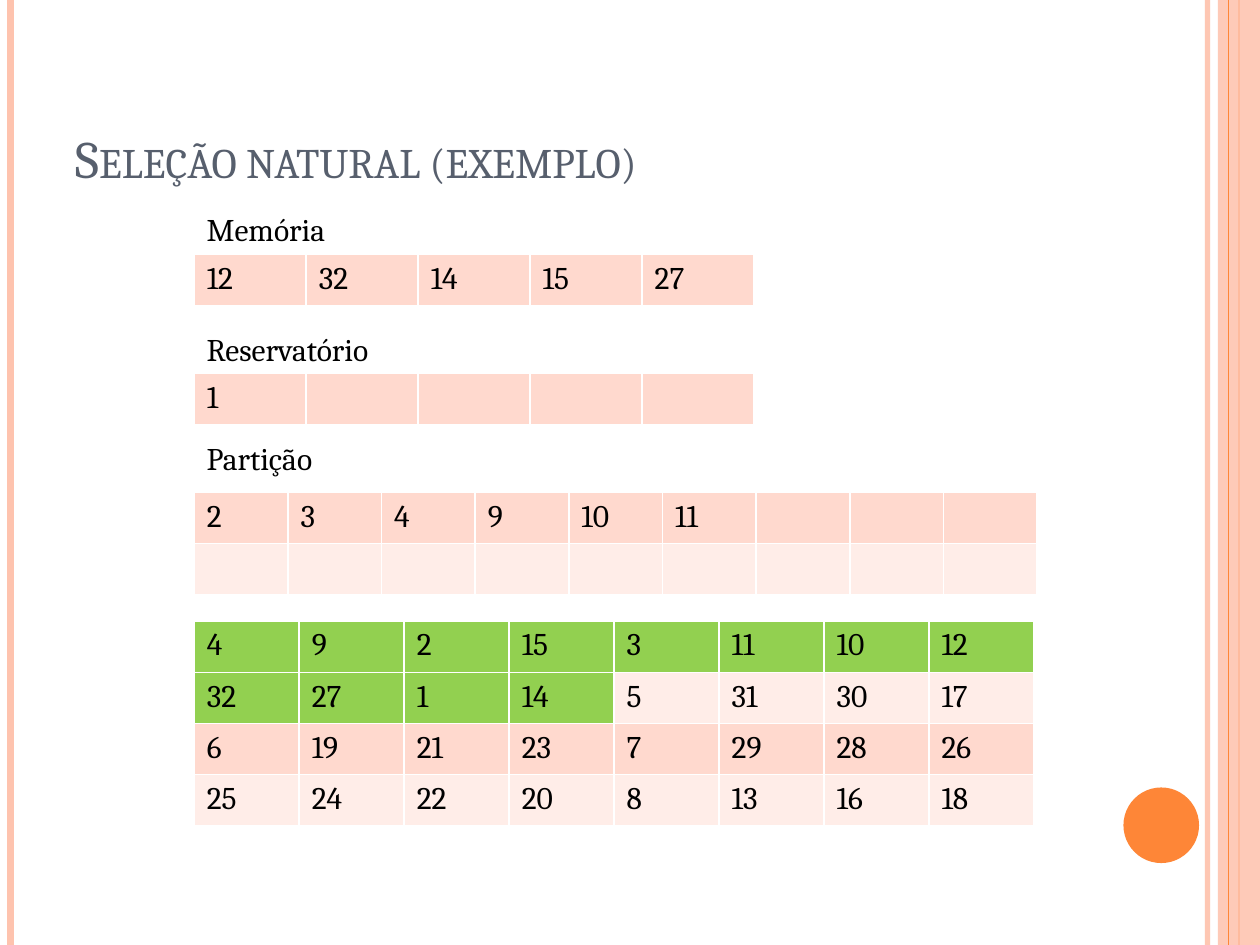
from lxml.etree import SubElement
from pptx import Presentation
from pptx.dml.color import RGBColor
from pptx.enum.shapes import MSO_CONNECTOR as Connector, MSO_SHAPE as Preset
from pptx.enum.text import MSO_ANCHOR as Anchor
from pptx.oxml.ns import qn
from pptx.util import Pt

PAGE_WIDTH, PAGE_HEIGHT = 720, 540
FONT = "Cambria"
PEACH, ORANGE = "FEC3AE", "FE8637"
BANDS = ("FFD9CE", "FFEDE8")
GREEN = "92D050"
ROW_HEIGHT = 29.2
TABLE_LEFT = 111


def color(value):
    return RGBColor.from_string(value)


def set_alpha(fill, percent):
    element = fill._xPr.find(qn("a:solidFill"))[0]
    SubElement(element, qn("a:alpha")).set("val", str(percent * 1000))


def write(frame, text, size=18, ink="000000", small_caps=False):
    span = frame.paragraphs[0].add_run()
    span.text = text
    span.font.name = FONT
    span.font.size = Pt(size)
    span.font.color.rgb = color(ink)
    if small_caps:
        span.font._element.set("cap", "small")


def add_text(page, text, left, top, width, height, anchor=Anchor.TOP, wrap=False, **style):
    box = page.shapes.add_textbox(Pt(left), Pt(top), Pt(width), Pt(height))
    box.text_frame.word_wrap = wrap
    box.text_frame.vertical_anchor = anchor
    write(box.text_frame, text, **style)


def add_vertical(page, x, ink, weight, alpha=100):
    rule = page.shapes.add_connector(Connector.STRAIGHT, Pt(x), Pt(0), Pt(x), Pt(PAGE_HEIGHT))
    rule.line.color.rgb = color(ink)
    rule.line.width = Pt(weight)
    if alpha < 100:
        set_alpha(rule.line.fill, alpha)
    SubElement(rule._element.spPr, qn("a:effectLst"))


def add_solid(page, preset, left, top, width, height, ink):
    solid = page.shapes.add_shape(preset, Pt(left), Pt(top), Pt(width), Pt(height))
    solid.shadow.inherit = False
    solid.fill.solid()
    solid.fill.fore_color.rgb = color(ink)
    solid.line.fill.background()
    return solid


def add_frame(page):
    """Draw the stripes at both page edges and the orange disc."""
    add_vertical(page, 690, PEACH, 3, alpha=93)
    add_vertical(page, 6, PEACH, 4.5)
    add_vertical(page, 708, ORANGE, 1.5)
    band = add_solid(page, Preset.RECTANGLE, 696, 0, PAGE_WIDTH - 696, PAGE_HEIGHT, PEACH)
    set_alpha(band.fill, 87)
    add_vertical(page, 702, ORANGE, 0.75)
    add_solid(page, Preset.OVAL, 642, 450, 43.2, 43.2, ORANGE)


def add_border(cell):
    properties = cell._tc.get_or_add_tcPr()
    for position, side in enumerate(("a:lnL", "a:lnR", "a:lnT", "a:lnB")):
        edge = properties.makeelement(qn(side), {"w": str(Pt(1))})
        properties.insert(position, edge)
        SubElement(SubElement(edge, qn("a:solidFill")), qn("a:srgbClr")).set("val", "FFFFFF")


def add_grid(page, top, width, columns, rows, used=0):
    """Draw a banded table; the first `used` cells in reading order are green."""
    graphic = page.shapes.add_table(len(rows), columns, Pt(TABLE_LEFT), Pt(top),
                                    Pt(width), Pt(ROW_HEIGHT * len(rows)))
    table = graphic.table
    table.first_row = table.horz_banding = False
    for column in table.columns:
        column.width = Pt(width / columns)
    for row_index, row in enumerate(rows):
        values = row.split()
        for column_index in range(columns):
            cell = table.cell(row_index, column_index)
            is_used = row_index * columns + column_index < used
            cell.fill.solid()
            cell.fill.fore_color.rgb = color(GREEN if is_used else BANDS[row_index % 2])
            add_border(cell)
            if column_index < len(values):
                write(cell.text_frame, values[column_index])


def add_label(page, text, top, width):
    add_text(page, text, TABLE_LEFT, top, width, 29)


def main():
    deck = Presentation()
    deck.slide_width, deck.slide_height = Pt(PAGE_WIDTH), Pt(PAGE_HEIGHT)
    page = deck.slides.add_slide(deck.slide_layouts[6])
    add_frame(page)
    add_text(page, "Seleção natural (exemplo)", 36, 21.6, 588, 90, anchor=Anchor.BOTTOM,
             wrap=True, size=30, ink="575F6D", small_caps=True)
    add_label(page, "Memória", 116.6, 90)
    add_grid(page, 145.5, 320, 5, ["12 32 14 15 27"])
    add_label(page, "Reservatório", 184.8, 121)
    add_grid(page, 213.5, 320, 5, ["1"])
    add_label(page, "Partição", 247.5, 85)
    add_grid(page, 281.5, 481.7, 9, ["2 3 4 9 10 11", ""])
    add_grid(page, 355, 480, 8, [
        "4 9 2 15 3 11 10 12",
        "32 27 1 14 5 31 30 17",
        "6 19 21 23 7 29 28 26",
        "25 24 22 20 8 13 16 18",
    ], used=12)
    deck.save("out.pptx")


if __name__ == "__main__":
    main()
